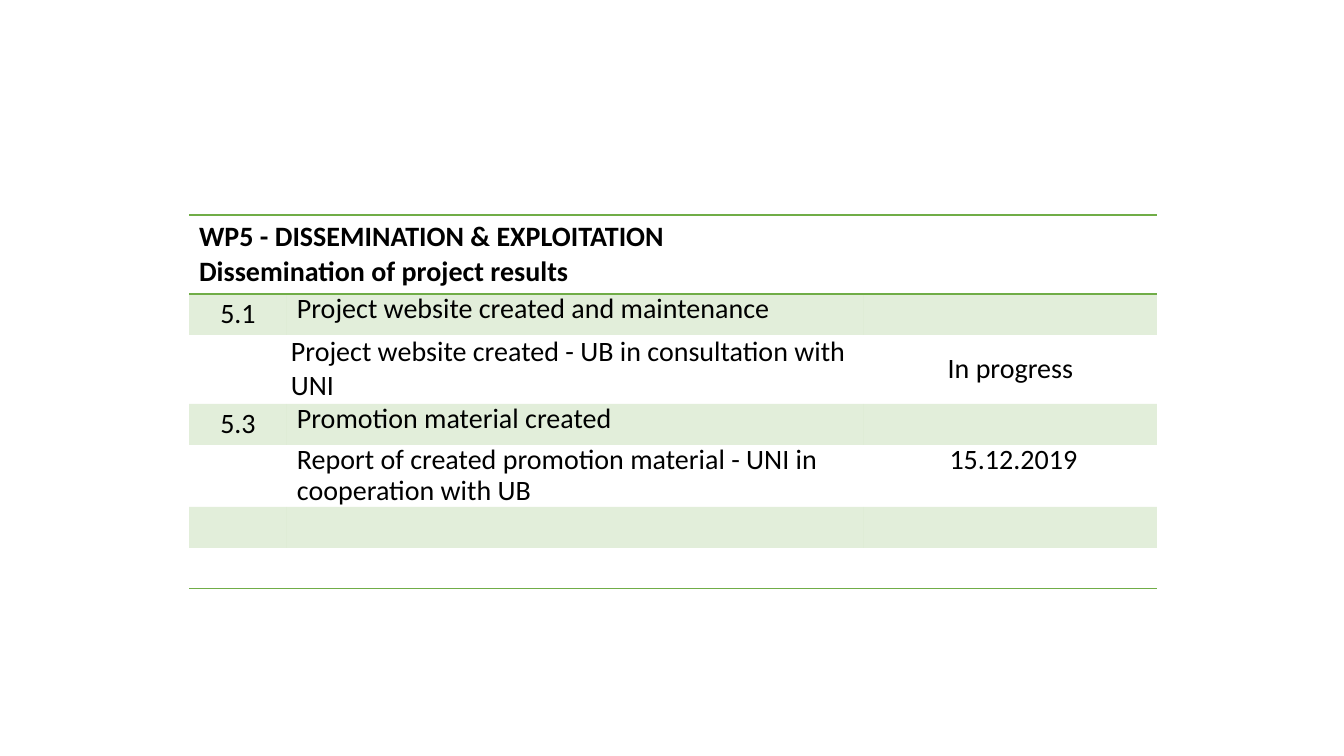
from dataclasses import dataclass

from lxml.etree import SubElement
from pptx import Presentation
from pptx.dml.color import RGBColor
from pptx.enum.text import MSO_ANCHOR, PP_ALIGN
from pptx.oxml import parse_xml
from pptx.oxml.ns import nsdecls, qn
from pptx.util import Pt

PX = 914400 / 100.8
NO_STYLE = "{2D5ABB26-0587-4C30-8999-92F81FD0307C}"
COLS = (98, 577, 293)
ROWS = (79, 41, 69, 40, 62, 41, 41)
HEADING = ("WP5 - DISSEMINATION & EXPLOITATION", "Dissemination of project results")


@dataclass(frozen=True)
class Theme:
    """Colours and type of the slide."""
    green: str = "70AD47"
    ink: str = "000000"
    font: str = "Calibri"
    size: int = 20
    rule: int = 1
    band_alpha: int = 20


THEME = Theme()


def px(n):
    """Turn pixels into EMU."""
    return round(n * PX)


def fill_cell(cell, banded):
    """Give a cell the pale band or no fill."""
    if not banded:
        cell.fill.background()
        return
    cell.fill.solid()
    cell.fill.fore_color.rgb = RGBColor.from_string(THEME.green)
    color = cell._tc.tcPr.find(".//" + qn("a:srgbClr"))
    SubElement(color, qn("a:alpha"), val=str(THEME.band_alpha * 1000))


def rule_cell(cell, *sides):
    """Draw green rules on the given sides of a cell, in schema order."""
    for i, side in enumerate(sides):
        cell._tc.get_or_add_tcPr().insert(i, parse_xml(
            f'<a:ln{side} {nsdecls("a")} w="{Pt(THEME.rule)}"><a:solidFill>'
            f'<a:srgbClr val="{THEME.green}"/></a:solidFill></a:ln{side}>'))


def add_run(p, text, bold=False):
    """Add one run in the theme font."""
    r = p.add_run()
    r.text = text
    r.font.name = THEME.font
    r.font.size = Pt(THEME.size)
    r.font.bold = bold
    r.font.color.rgb = RGBColor.from_string(THEME.ink)


def write_cell(cell, text, align=PP_ALIGN.LEFT, middle=False, indent=False, spacing=0.9):
    """Write a body cell with narrow side margins."""
    cell.margin_left = cell.margin_right = px(4)
    cell.margin_top = cell.margin_bottom = 0
    cell.vertical_anchor = MSO_ANCHOR.MIDDLE if middle else MSO_ANCHOR.TOP
    p = cell.text_frame.paragraphs[0]
    if indent:
        pPr = p._p.get_or_add_pPr()
        pPr.set("marL", str(px(6)))
        pPr.set("indent", "0")
        tabs = SubElement(pPr, qn("a:tabLst"))
        SubElement(tabs, qn("a:tab"), pos=str(px(16)), algn="l")
    p.alignment = align
    p.line_spacing = spacing
    add_run(p, text)


def write_heading(table):
    """Merge the first row and write the two heading lines."""
    head = table.cell(0, 0)
    head.merge(table.cell(0, len(COLS) - 1))
    p = head.text_frame.paragraphs[0]
    add_run(p, HEADING[0], bold=True)
    p.add_line_break()
    add_run(p, HEADING[1], bold=True)


def add_work_package(s, x, y):
    """Place the work package table with its top left corner at x, y."""
    table = s.shapes.add_table(len(ROWS), len(COLS), px(x), px(y),
                               px(sum(COLS)), px(sum(ROWS))).table
    table._tbl.tblPr.find(qn("a:tableStyleId")).text = NO_STYLE
    for col, width in zip(table.columns, COLS):
        col.width = px(width)
    for i, (row, height) in enumerate(zip(table.rows, ROWS)):
        row.height = px(height)
        for cell in row.cells:
            fill_cell(cell, i % 2 == 1)
            if i == 0:
                rule_cell(cell, "T", "B")
            elif i == len(ROWS) - 1:
                rule_cell(cell, "B")
    write_heading(table)
    for i, number, title in ((1, "5.1", "Project website created and maintenance"),
                             (3, "5.3", "Promotion material created")):
        write_cell(table.cell(i, 0), number, PP_ALIGN.CENTER, middle=True)
        write_cell(table.cell(i, 1), title, indent=True)
    write_cell(table.cell(2, 1), "Project website created - UB in consultation with UNI",
               spacing=1.0)
    write_cell(table.cell(2, 2), "In progress", PP_ALIGN.CENTER, middle=True)
    write_cell(table.cell(4, 1),
               "Report of created promotion material - UNI in cooperation with UB",
               indent=True)
    write_cell(table.cell(4, 2), "15.12.2019", PP_ALIGN.CENTER, indent=True)


def main():
    """Build and save the slide."""
    prs = Presentation()
    prs.slide_width, prs.slide_height = px(1344), px(756)
    s = prs.slides.add_slide(prs.slide_layouts[6])
    add_work_package(s, 189, 215)
    prs.save("out.pptx")


if __name__ == "__main__":
    main()
